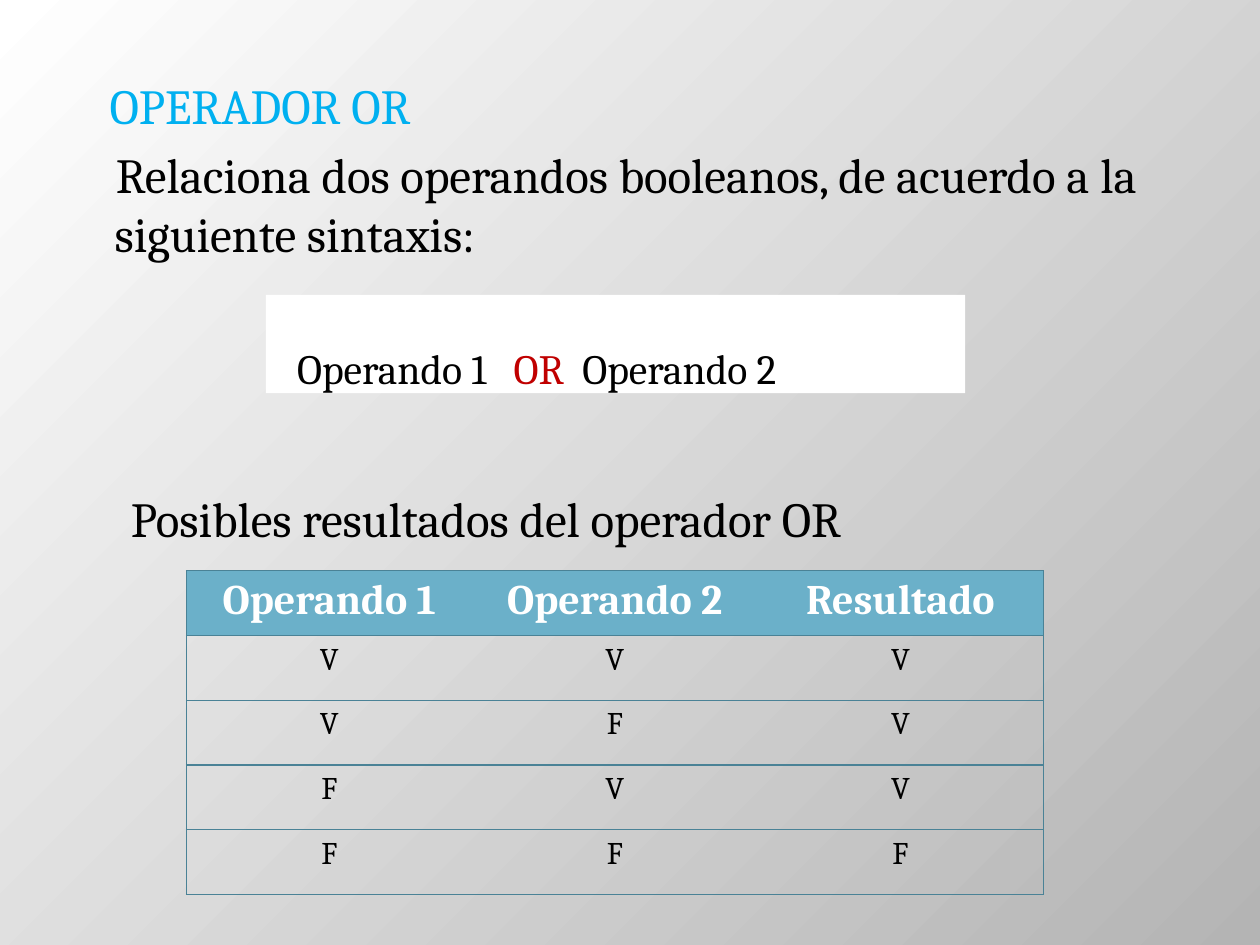
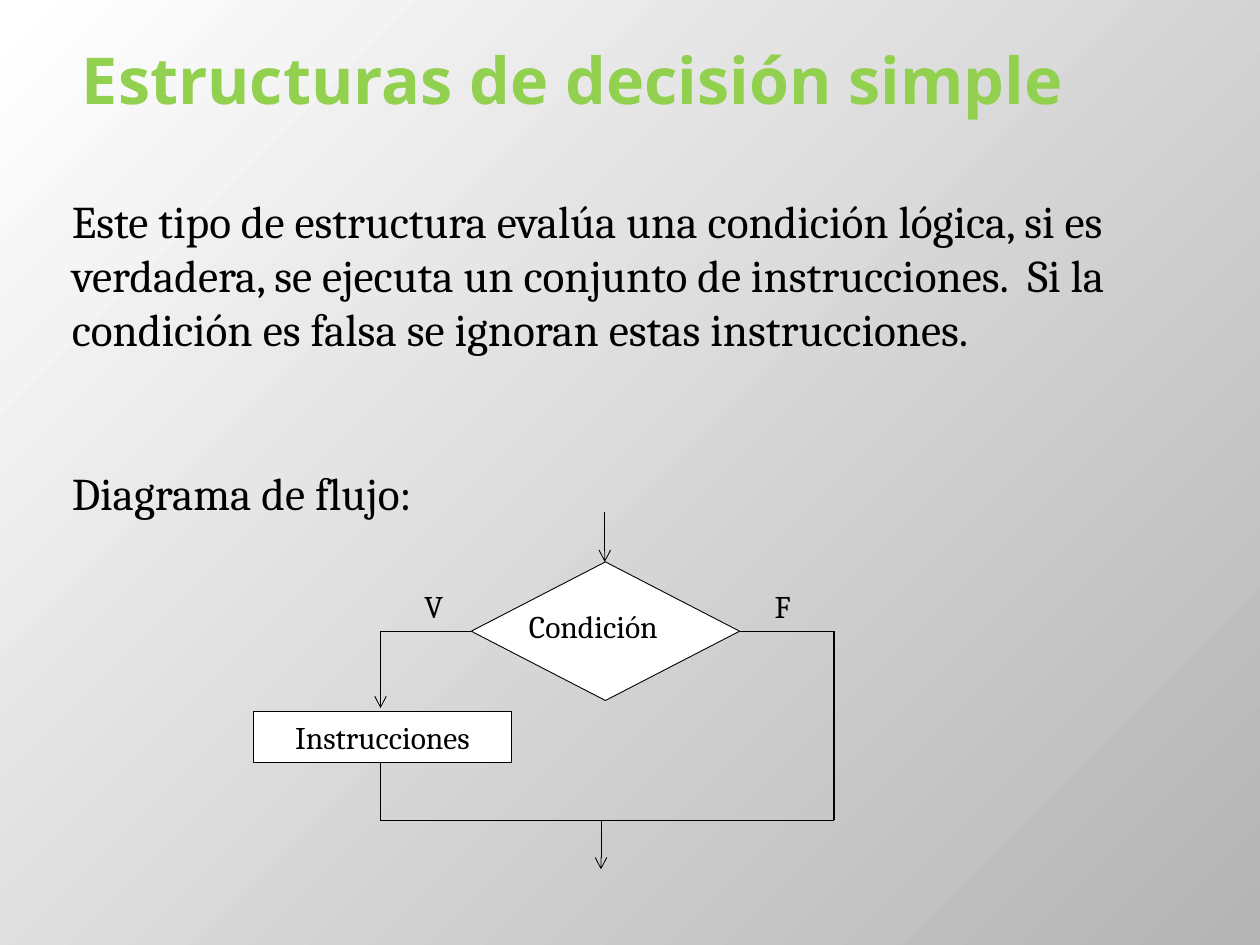
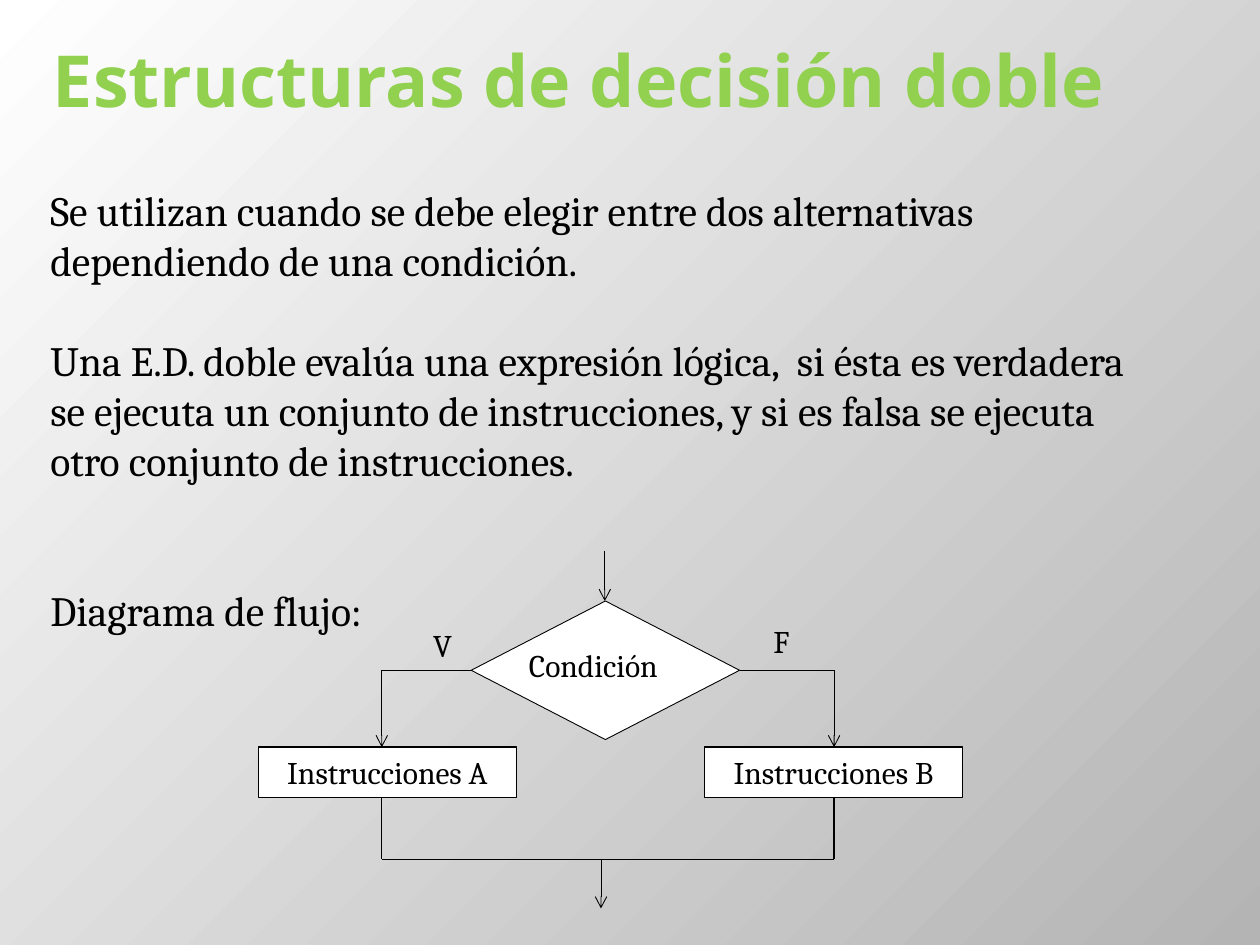
"""Builds three slides on the OR operator and on decision structures."""
from lxml import etree
from pptx import Presentation
from pptx.dml.color import RGBColor
from pptx.enum import shapes, text
from pptx.oxml import ns
from pptx.util import Inches, Pt

HUES = {"ink": "000000", "paper": "FFFFFF", "shade": "B4B4B4", "blue": "00B0F0",
        "red": "C00000", "green": "92D050", "head": "6BB0C9", "rule": "4A8296"}
SERIF, SANS = "Cambria", "Noto Sans"
PLAIN = "{2D5ABB26-0587-4C30-8999-92F81FD0307C}"
LEFT, CENTER = text.PP_ALIGN.LEFT, text.PP_ALIGN.CENTER

INTRO = [("OPERADOR OR", "blue", -0.04),
         ("Relaciona dos operandos booleanos, de acuerdo a la siguiente sintaxis:", "ink", 0.01)]
SYNTAX = [("Operando 1   ", "ink"), ("OR", "red"), ("  Operando 2", "ink")]
LEAD = "Posibles resultados del operador OR"
TRUTH = [("Operando 1", "Operando 2", "Resultado"),
         ("V", "V", "V"), ("V", "F", "V"), ("F", "V", "V"), ("F", "F", "F")]

FLOWS = [
    {"title": "Estructuras de decisión simple", "tsize": 36.9, "tleft": 0.55,
     "at": (0.47, 1.48, 9, 2.74), "size": 25.9, "mid": 5.01,
     "body": [("Este tipo de estructura evalúa una condición lógica, si es verdadera, "
               "se ejecuta un conjunto de instrucciones.  Si la condición es falsa "
               "se ignoran estas instrucciones.", 0),
              ("Diagrama de flujo:", 2)],
     "tags": [("V", 3.27, -0.4), ("F", 6.05, -0.4)],
     "arms": [(3.02, 3.74, ("Instrucciones", 2.01, 0.64)), (6.62, 5.87, None)]},
    {"title": "Estructuras de decisión doble", "tsize": 41, "tleft": 0.32,
     "at": (0.3, 1.42, 9, 3.15), "size": 23.8, "mid": 5.32,
     "body": [("Se utilizan cuando se debe elegir entre dos alternativas "
               "dependiendo de una condición.", 0),
              ("Una E.D. doble evalúa una expresión lógica,  si ésta es verdadera se "
               "ejecuta un conjunto de instrucciones, y si es falsa se ejecuta otro "
               "conjunto de instrucciones.", 1),
              ("Diagrama de flujo:", 2)],
     "tags": [("V", 3.34, -0.4), ("F", 6.04, -0.43)],
     "arms": [(3.03, 3.74, ("Instrucciones A", 2.05, 0.61)),
              (6.62, 5.87, ("Instrucciones B", 5.59, 0.61))]},
]


def rgb(hue):
    return RGBColor.from_string(HUES[hue])


def sub(node, tag, **attrs):
    return etree.SubElement(node, ns.qn(tag), **attrs)


def place(shape, at):
    shape.left, shape.top, shape.width, shape.height = map(Inches, at)


def add_run(para, words, size, hue="ink", face=SERIF, bold=False):
    run = para.add_run()
    run.text = words
    font = run.font
    font.name, font.size, font.bold = face, Pt(size), bold
    font.color.rgb = rgb(hue)


def indent(para, left=0, first=0):
    props = para._p.get_or_add_pPr()
    props.set("marL", str(Inches(left)))
    props.set("indent", str(Inches(first)))


def add_para(frame, index, gap):
    para = frame.add_paragraph() if index else frame.paragraphs[0]
    para.alignment = LEFT
    para.space_before = Pt(gap)
    indent(para)
    sub(para._p.get_or_add_pPr(), "a:buNone")
    return para


def get_body(slide, at):
    body = slide.placeholders[1]
    place(body, at)
    body.text_frame.auto_size = text.MSO_AUTO_SIZE.NONE
    return body.text_frame


def add_label(slide, words, at, size=18, wrap=False):
    frame = slide.shapes.add_textbox(*map(Inches, at)).text_frame
    frame.word_wrap = wrap
    add_run(frame.paragraphs[0], words, size)


def add_box(slide, kind, at, line=None):
    box = slide.shapes.add_shape(kind, *map(Inches, at))
    box.shadow.inherit = False
    box.fill.solid()
    box.fill.fore_color.rgb = rgb("paper")
    if line:
        box.line.color.rgb = rgb("ink")
        box.line.width = Pt(line)
    else:
        box.line.fill.background()
    return box


def add_line(slide, x1, y1, x2, y2, arrow=False):
    line = slide.shapes.add_connector(shapes.MSO_CONNECTOR.STRAIGHT,
                                      *map(Inches, (x1, y1, x2, y2)))
    line.line.color.rgb = rgb("ink")
    line.line.width = Pt(0.5 if arrow else 0.75)
    if arrow:
        sub(line.line._get_or_add_ln(), "a:tailEnd", type="arrow")
    sub(line._element.spPr, "a:effectLst")


def set_edge(cell, *sides):
    props = cell._tc.get_or_add_tcPr()
    for spot, side in enumerate(sides):
        edge = sub(props, "a:ln" + side, w=str(Pt(0.75)))
        sub(sub(edge, "a:solidFill"), "a:srgbClr", val=HUES["rule"])
        props.insert(spot, edge)


def add_truth(slide):
    rows, cols = len(TRUTH), len(TRUTH[0])
    frame = slide.shapes.add_table(rows, cols, *map(Inches, (1.48, 4.53, 6.8, 2.57)))
    table = frame.table
    table.horz_banding = False
    table._tbl.tblPr.find(ns.qn("a:tableStyleId")).text = PLAIN
    for r, row in enumerate(TRUTH):
        for c, words in enumerate(row):
            cell = table.cell(r, c)
            if r:
                cell.fill.background()
            else:
                cell.fill.solid()
                cell.fill.fore_color.rgb = rgb("head")
            para = cell.text_frame.paragraphs[0]
            para.alignment = CENTER
            add_run(para, words, 18 if r else 24, "ink" if r else "paper", bold=not r)
            outer = (["L"] if c == 0 else []) + (["R"] if c == cols - 1 else [])
            set_edge(cell, *outer, "T", "B")


def add_operator(slide):
    title = slide.shapes.title._element
    title.getparent().remove(title)
    frame = get_body(slide, (0.62, 0.55, 9, 2.42))
    for i, (words, hue, first) in enumerate(INTRO):
        para = add_para(frame, i, 5.6)
        indent(para, 0.19, first)
        add_run(para, words, 28, hue)
    box = add_box(slide, shapes.MSO_SHAPE.RECTANGLE, (2.11, 2.34, 5.55, 0.78))
    frame = box.text_frame
    frame.vertical_anchor = text.MSO_ANCHOR.BOTTOM
    frame.margin_bottom = 0
    para = frame.paragraphs[0]
    para.alignment = LEFT
    indent(para, 0.19, -0.04)
    for words, hue in SYNTAX:
        add_run(para, words, 23.8, hue)
    add_truth(slide)
    add_label(slide, LEAD, (0.94, 3.83, 6.53, 0.57), 28)


def add_chart(slide, flow):
    mid = flow["mid"]
    join = mid + 1.5
    add_box(slide, shapes.MSO_SHAPE.DIAMOND, (3.74, mid - 0.55, 2.13, 1.1), 0.5)
    add_label(slide, "Condición", (4.1, mid - 0.24, 1.73, 0.4), wrap=True)
    add_line(slide, 4.8, mid - 0.95, 4.8, mid - 0.55, True)
    add_line(slide, 4.77, join, 4.77, join + 0.39, True)
    for x, tip, step in flow["arms"]:
        add_line(slide, tip, mid, x, mid)
        start = mid
        if step:
            words, left, drop = step
            add_line(slide, x, mid, x, mid + 0.61, True)
            box = add_box(slide, shapes.MSO_SHAPE.RECTANGLE,
                          (left, mid + drop, 2.05, 0.4), 0.75)
            para = box.text_frame.paragraphs[0]
            para.alignment = CENTER
            add_run(para, words, 18)
            start = mid + drop + 0.4
        add_line(slide, x, start, x, join)
    add_line(slide, flow["arms"][1][0], join, flow["arms"][0][0], join)
    for words, left, rise in flow["tags"]:
        add_label(slide, words, (left, mid + rise, 0.36, 0.4))


def add_flow(slide, flow):
    title = slide.shapes.title
    place(title, (flow["tleft"], 0, 9, 1.25))
    para = title.text_frame.paragraphs[0]
    para.alignment = LEFT
    add_run(para, flow["title"], flow["tsize"], "green", SANS, True)
    frame = get_body(slide, flow["at"])
    for i, (words, lines) in enumerate(flow["body"]):
        para = add_para(frame, i, round(lines * flow["size"] * 1.2, 1))
        add_run(para, words, flow["size"])
    add_chart(slide, flow)


def set_ground(master):
    fill = master.background.fill
    fill.gradient()
    for stop, hue in zip(fill.gradient_stops, ("paper", "shade")):
        stop.color.rgb = rgb(hue)
    grad = master._element.find(".//" + ns.qn("a:gradFill"))
    grad.remove(grad.find(ns.qn("a:lin")))
    sub(sub(grad, "a:path", path="circle"), "a:fillToRect", r="100000", b="100000")


def main():
    deck = Presentation()
    deck.slide_width, deck.slide_height = Inches(10), Inches(7.5)
    set_ground(deck.slide_master)
    layout = deck.slide_layouts[1]
    add_operator(deck.slides.add_slide(layout))
    for flow in FLOWS:
        add_flow(deck.slides.add_slide(layout), flow)
    deck.save("out.pptx")


if __name__ == "__main__":
    main()
